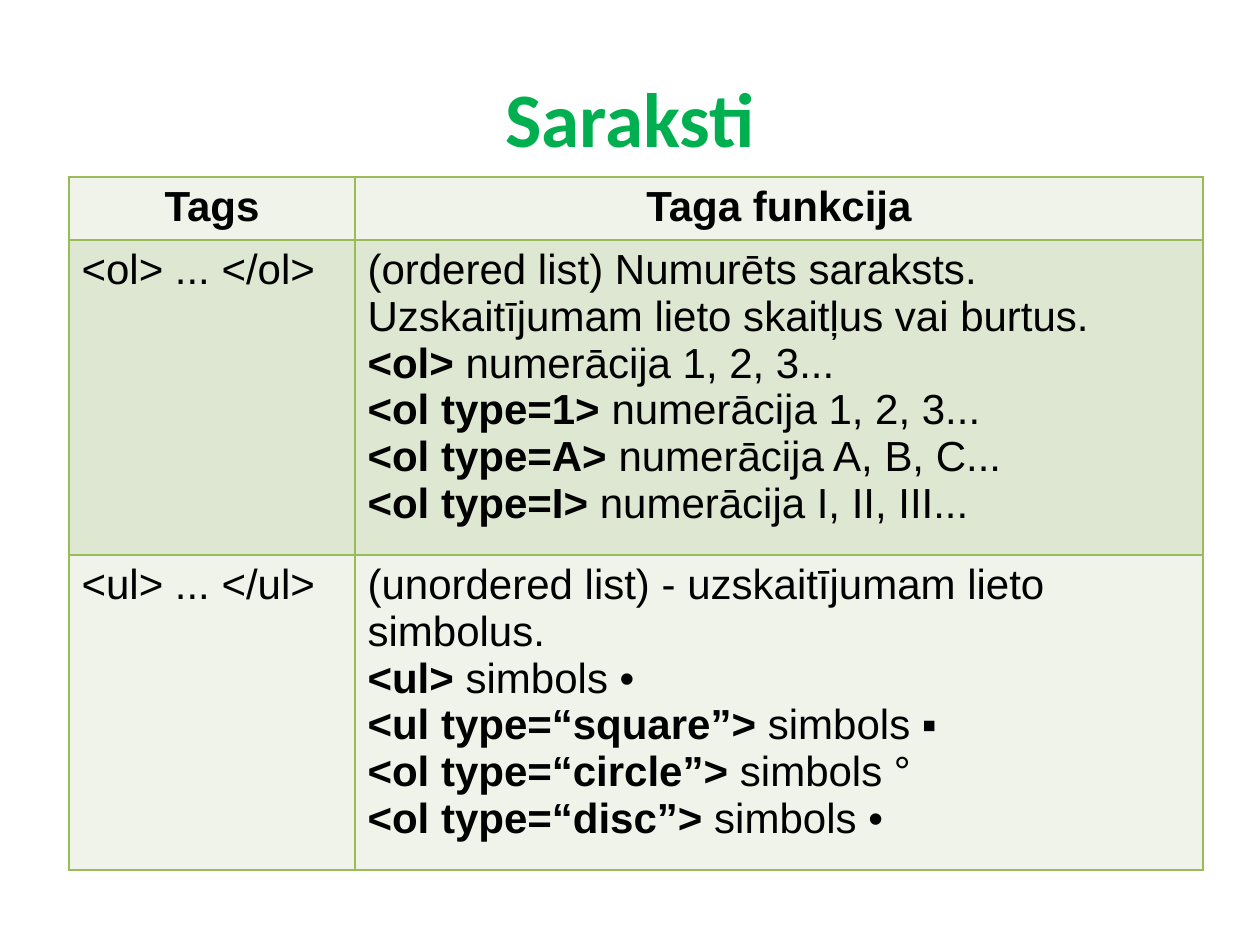
"""Build the slide about HTML list tags."""
from lxml import etree
from pptx import Presentation
from pptx.dml.color import RGBColor
from pptx.enum.text import MSO_ANCHOR, PP_ALIGN
from pptx.oxml.ns import qn
from pptx.util import Pt

CENTER, LEFT, MIDDLE = PP_ALIGN.CENTER, PP_ALIGN.LEFT, MSO_ANCHOR.MIDDLE
PX = 914400 // 126
GREEN = RGBColor(0x00, 0xB0, 0x50)
BLACK = RGBColor(0x00, 0x00, 0x00)
BORDER = RGBColor(0x9B, 0xBB, 0x59)
PALE = RGBColor(0xEF, 0xF3, 0xEA)
SAGE = RGBColor(0xDE, 0xE7, 0xD1)
EDGES = ("a:lnL", "a:lnR", "a:lnT", "a:lnB")

COLUMNS = (286, 848)
ROW_HEIGHTS = (59, 294, 294)
ROW_FILLS = (PALE, SAGE, PALE)
HEADINGS = ("Tags", "Taga funkcija")
LISTS = (
    ("<ol> ... </ol>",
     "(ordered list) Numurēts saraksts. Uzskaitījumam lieto skaitļus vai burtus.",
     (("<ol> ", "numerācija 1, 2, 3..."),
      ("<ol type=1> ", "numerācija 1, 2, 3..."),
      ("<ol type=A> ", "numerācija A, B, C..."),
      ("<ol type=I> ", "numerācija I, II, III..."))),
    ("<ul> ... </ul>",
     "(unordered list) - uzskaitījumam lieto simbolus.",
     (("<ul> ", "simbols •"),
      ("<ul type=“square”> ", "simbols ▪"),
      ("<ol type=“circle”> ", "simbols °"),
      ("<ol type=“disc”> ", "simbols •"))),
)


class SlideBuilder:
    """Hold the style and the current slide."""

    def __init__(self, slide):
        """Start on the given slide."""
        self.slide = slide

    def add_text(self, frame, paragraphs, align, font, size, color):
        """Fill a frame with paragraphs of (text, bold) runs."""
        for index, runs in enumerate(paragraphs):
            paragraph = frame.add_paragraph() if index else frame.paragraphs[0]
            paragraph.alignment = align
            for text, bold in runs:
                run = paragraph.add_run()
                run.text = text
                run.font.name, run.font.size = font, Pt(size)
                run.font.bold = bold
                run.font.color.rgb = color

    def title(self, text, left, top, width, height):
        """Add the centred heading."""
        heading = self.slide.shapes.add_textbox(
            left * PX, top * PX, width * PX, height * PX)
        frame = heading.text_frame
        frame.word_wrap = True
        frame.vertical_anchor = MIDDLE
        self.add_text(frame, [[(text, True)]], CENTER, "Calibri", 44, GREEN)

    def border(self, cell):
        """Draw a thin line on every edge of a cell."""
        properties = cell._tc.get_or_add_tcPr()
        for index, edge in enumerate(EDGES):
            line = etree.Element(qn(edge), w=str(Pt(1)))
            fill = etree.SubElement(line, qn("a:solidFill"))
            etree.SubElement(fill, qn("a:srgbClr"), val=str(BORDER))
            properties.insert(index, line)

    def table(self, rows, left, top):
        """Add the table, each cell given as paragraphs of runs."""
        table = self.slide.shapes.add_table(
            len(rows), len(COLUMNS), left * PX, top * PX,
            sum(COLUMNS) * PX, sum(ROW_HEIGHTS) * PX).table
        table.first_row = table.horz_banding = False
        for column, width in zip(table.columns, COLUMNS):
            column.width = width * PX
        for r, cells in enumerate(rows):
            table.rows[r].height = ROW_HEIGHTS[r] * PX
            for c, paragraphs in enumerate(cells):
                cell = table.cell(r, c)
                self.border(cell)
                cell.fill.solid()
                cell.fill.fore_color.rgb = ROW_FILLS[r]
                align = LEFT if r else CENTER
                self.add_text(cell.text_frame, paragraphs, align, "Arial", 24, BLACK)


def main():
    """Build and save the presentation."""
    deck = Presentation()
    deck.slide_width, deck.slide_height = 1260 * PX, 945 * PX
    builder = SlideBuilder(deck.slides.add_slide(deck.slide_layouts[6]))
    builder.title("Saraksti", 63, 38, 1134, 157)
    rows = [[[[(heading, True)]] for heading in HEADINGS]]
    for tag, summary, variants in LISTS:
        details = [[(code, True), (meaning, False)] for code, meaning in variants]
        rows.append([[[(tag, False)]], [[(summary, False)], *details]])
    builder.table(rows, 69, 177)
    deck.save("out.pptx")


if __name__ == "__main__":
    main()
